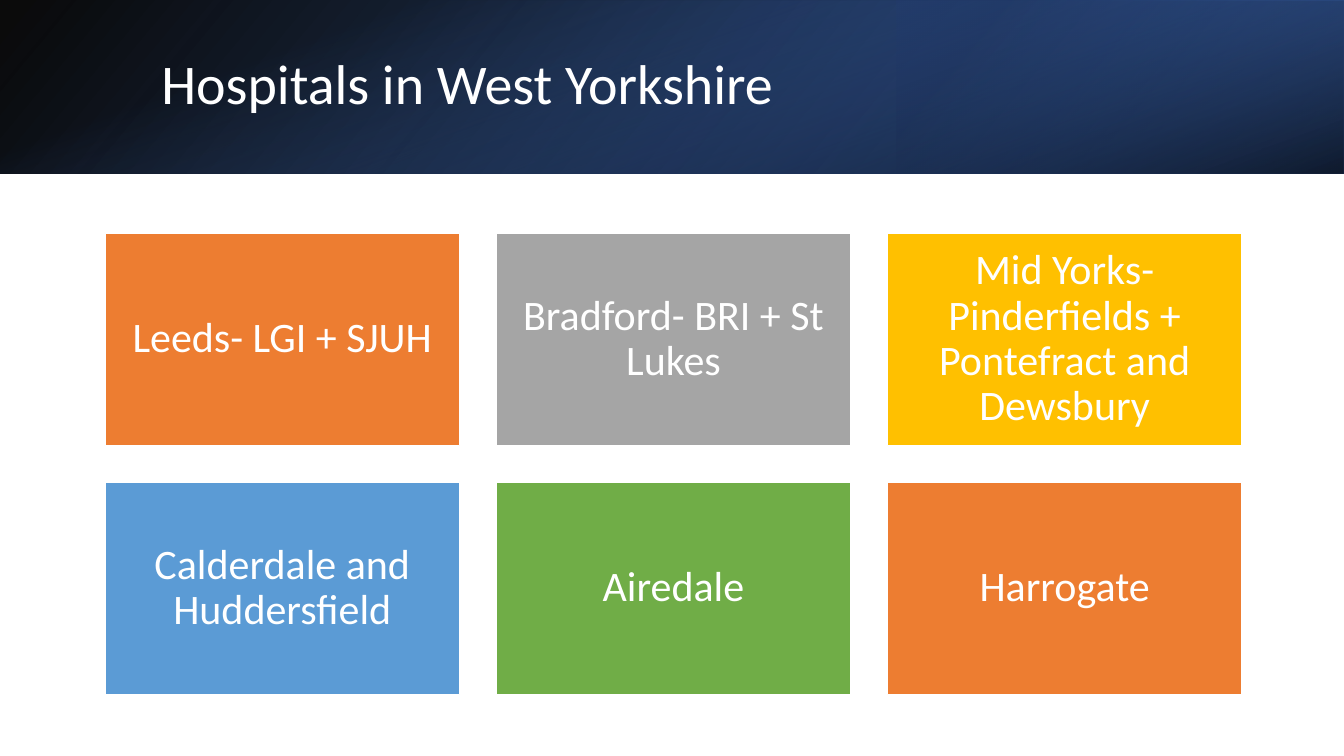
from lxml import etree
from pptx import Presentation
from pptx.dml.color import RGBColor
from pptx.enum.shapes import MSO_SHAPE
from pptx.enum.text import MSO_ANCHOR, PP_ALIGN
from pptx.oxml.ns import qn
from pptx.util import Inches, Pt

RECT = MSO_SHAPE.RECTANGLE
MIDDLE = MSO_ANCHOR.MIDDLE
LEFT, CENTER = PP_ALIGN.LEFT, PP_ALIGN.CENTER

COLORS = {
    "white": "FFFFFF", "black": "000000", "navy": "203864",
    "deep_blue": "2F5597", "mid_blue": "4472C4", "orange": "ED7D31",
    "gray": "A5A5A5", "gold": "FFC000", "sky": "5B9BD5", "green": "70AD47",
}
BANNER = 1.72
HOSPITALS = [
    ("Leeds- LGI + SJUH", "orange"),
    ("Bradford- BRI + St Lukes", "gray"),
    ("Mid Yorks- Pinderfields + Pontefract and Dewsbury", "gold"),
    ("Calderdale and Huddersfield", "sky"),
    ("Airedale", "green"),
    ("Harrogate", "orange"),
]


class SlideBuilder:
    """Draws styled elements on the current slide."""

    font = "Calibri"

    def __init__(self, slide):
        self.s = slide

    def color(self, name):
        return RGBColor.from_string(COLORS[name])

    def rect(self, x, y, w, h):
        sp = self.s.shapes.add_shape(RECT, Inches(x), Inches(y), Inches(w), Inches(h))
        sp.shadow.inherit = False
        return sp

    def text(self, sp, text, size, align):
        tf = sp.text_frame
        tf.text = text
        tf.word_wrap = True
        tf.vertical_anchor = MIDDLE
        p = tf.paragraphs[0]
        p.alignment = align
        p.line_spacing = 0.9
        p.font.name = self.font
        p.font.size = Pt(size)
        p.font.color.rgb = self.color("white")
        return tf

    def title(self, text, x, y, w, h):
        sp = self.s.shapes.title
        sp.left, sp.top, sp.width, sp.height = Inches(x), Inches(y), Inches(w), Inches(h)
        self.text(sp, text, 40, LEFT)
        self.s.shapes._spTree.append(sp._element)

    def gradient(self, x, y, w, h, stops, angle, rotation=0, flip=False):
        sp = self.rect(x, y, w, h)
        sp.rotation = rotation
        sp.line.fill.background()
        sp.fill.gradient()
        spPr = sp._element.spPr
        if flip:
            spPr.find(qn("a:xfrm")).set("flipH", "1")
        grad = etree.Element(qn("a:gradFill"), rotWithShape="1")
        gs_lst = etree.SubElement(grad, qn("a:gsLst"))
        for pos, name, alpha in stops:
            gs = etree.SubElement(gs_lst, qn("a:gs"), pos=str(pos * 1000))
            clr = etree.SubElement(gs, qn("a:srgbClr"), val=COLORS[name])
            etree.SubElement(clr, qn("a:alpha"), val=str(alpha * 1000))
        etree.SubElement(grad, qn("a:lin"), ang=str(angle * 60000), scaled="0")
        spPr.replace(spPr.find(qn("a:gradFill")), grad)

    def card(self, text, fill, x, y, w, h):
        sp = self.rect(x, y, w, h)
        sp.fill.solid()
        sp.fill.fore_color.rgb = self.color(fill)
        sp.line.color.rgb = self.color("white")
        sp.line.width = Pt(1)
        tf = self.text(sp, text, 30, CENTER)
        tf.margin_left = tf.margin_right = Inches(0.12)
        tf.margin_top = tf.margin_bottom = Inches(0.12)


def main():
    prs = Presentation()
    prs.slide_width, prs.slide_height = Inches(13.33), Inches(7.5)
    b = SlideBuilder(prs.slides.add_slide(prs.slide_layouts[5]))

    b.gradient(0, 0, 13.33, BANNER,
               [(0, "black", 96), (100, "deep_blue", 100)], 140, flip=True)
    b.gradient(8.89, 0, 4.44, BANNER,
               [(19, "navy", 68), (100, "mid_blue", 79)], 320, 180, flip=True)
    b.gradient(5.8, -5.8, BANNER, 13.33,
               [(23, "mid_blue", 0), (99, "black", 74)], 340, 90)
    b.title("Hospitals in West Yorkshire", 1.5, 0.38, 10.98, 0.96)

    for i, (name, fill) in enumerate(HOSPITALS):
        row, col = divmod(i, 3)
        b.card(name, fill, 1.04 + col * 3.88, 2.31 + row * 2.47, 3.52, 2.11)

    prs.save("out.pptx")


if __name__ == "__main__":
    main()
